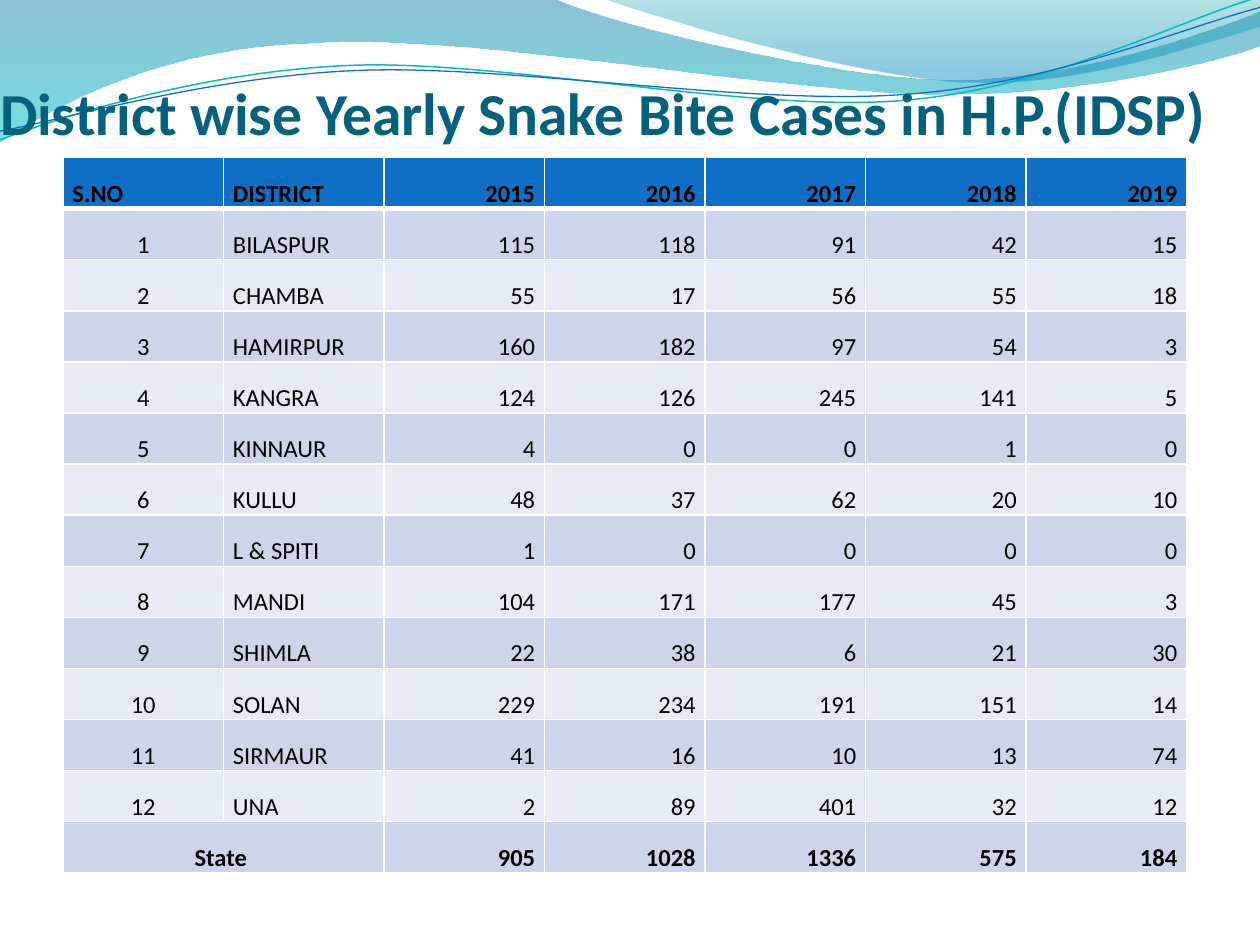
import math

import pptx
import pptx.util
import pptx.dml.color
import pptx.enum.text
import pptx.oxml
import pptx.oxml.ns

Pt = pptx.util.Pt
qn = pptx.oxml.ns.qn
ALIGN = pptx.enum.text.PP_ALIGN
BOTTOM = pptx.enum.text.MSO_ANCHOR.BOTTOM
NS = pptx.oxml.ns.nsdecls("a")

# Content
COLORS = {
    "title": "04617B", "text": "000000", "header": "0F6FC6", "grid": "FFFFFF",
    "odd": "CCD5EA", "even": "E7EBF5", "teal": "0AB8BF", "blue": "0F6FC6",
    "wave_top": "0074A1", "wave_bottom": "00C6CF",
    "crest_top": "00A1A9", "crest_bottom": "008BBF",
}
TITLE = "District wise Yearly Snake Bite Cases in H.P.(IDSP)"
HEADER = ["S.NO", "DISTRICT", 2015, 2016, 2017, 2018, 2019]
DISTRICTS = [
    ("BILASPUR", 115, 118, 91, 42, 15),
    ("CHAMBA", 55, 17, 56, 55, 18),
    ("HAMIRPUR", 160, 182, 97, 54, 3),
    ("KANGRA", 124, 126, 245, 141, 5),
    ("KINNAUR", 4, 0, 0, 1, 0),
    ("KULLU", 48, 37, 62, 20, 10),
    ("L & SPITI", 1, 0, 0, 0, 0),
    ("MANDI", 104, 171, 177, 45, 3),
    ("SHIMLA", 22, 38, 6, 21, 30),
    ("SOLAN", 229, 234, 191, 151, 14),
    ("SIRMAUR", 41, 16, 10, 13, 74),
    ("UNA", 2, 89, 401, 32, 12),
]
TOTALS = ["State ", "", 905, 1028, 1336, 575, 184]

# Each wave: start point, then segments of one point (line) or three (curve)
WAVES = [
    {"start": (0, 0), "segments": [
        [(316.8, -0.7)],
        [(342.7, 12.2), (478.1, 45.4), (545.8, 45.4)],
        [(614.2, 45.4), (689.8, 18.7), (720, 6.5)],
        [(720.7, 25.9)],
        [(707.8, 31.7), (626.4, 54.7), (537.1, 54)],
        [(447.8, 54), (275, 20.2), (185, 24.5)],
        [(92.9, 25.9), (33.1, 59.8), (-0.7, 81.4)],
        [(0, 0)]],
     "gradient": [(0, "wave_top", 45), (100, "wave_bottom", 55)]},
    {"start": (344.9, -0.7), "segments": [
        [(366.5, 7.9), (491, 44.6), (553.7, 46.8)],
        [(616.3, 49.7), (691.9, 23), (720, 15.1)],
        [(720, 0)],
        [(344.9, -0.7)]],
     "gradient": [(0, "crest_top", 30), (80, "crest_bottom", 45)]},
    {"start": (0, 79.9), "segments": [
        [(34.6, 67), (113.8, 41), (199.4, 37.4)],
        [(284.4, 33.8), (427, 64.1), (513.4, 57.6)],
        [(599.8, 51.1), (675.4, 10.8), (718.6, -1.4)]],
     "line": ("teal", 0.85), "center": (359.3, 41.4)},
    {"start": (0, 74.9), "segments": [
        [(33.8, 69.1), (118.1, 43.9), (203.8, 40.3)],
        [(290.2, 36.7), (427, 60.5), (516.2, 54)],
        [(601.9, 48.2), (677.5, 15.1), (720, 4.3)]],
     "line": ("blue", 0.75), "center": (359.6, 42.5)},
]
LINE_TILT = -2.7
TABLE_LEFT, TABLE_TOP, COL_WIDTH, ROW_HEIGHT = 36, 90, 91.75, 29.2


def rgb(name):
    return pptx.dml.color.RGBColor.from_string(COLORS[name])


def write(tf, text, size=14, color="text", bold=False, align=ALIGN.LEFT, spacing=None):
    p = tf.paragraphs[0]
    p.alignment = align
    if spacing:
        p.line_spacing = spacing
    r = p.add_run()
    r.text = str(text)
    r.font.name = "Calibri"
    r.font.size = Pt(size)
    r.font.bold = bold
    r.font.color.rgb = rgb(color)


def set_margins(box, left, top, right, bottom):
    box.margin_left, box.margin_top = Pt(left), Pt(top)
    box.margin_right, box.margin_bottom = Pt(right), Pt(bottom)


def turn(point, center, degrees):
    x, y = point[0] - center[0], point[1] - center[1]
    cos, sin = math.cos(math.radians(degrees)), math.sin(math.radians(degrees))
    return center[0] + x * cos - y * sin, center[1] + x * sin + y * cos


def bend(sp, segments):
    """Turn each run of three straight segments into one Bézier curve."""
    steps = iter(list(sp._element.iter(qn("a:lnTo"))))
    for segment in segments:
        first, *others = [next(steps) for _ in segment]
        if others:
            curve = pptx.oxml.parse_xml(f"<a:cubicBezTo {NS}/>")
            first.addprevious(curve)
            for step in (first, *others):
                curve.append(step[0])
                step.getparent().remove(step)


def add_wave(s, start, segments, gradient=None, line=None, center=None):
    points = [start] + [point for segment in segments for point in segment]
    if center:
        points = [turn(point, center, -LINE_TILT) for point in points]
    points = [(Pt(x), Pt(y)) for x, y in points]
    builder = s.shapes.build_freeform(*points[0])
    builder.add_line_segments(points[1:], close=bool(gradient))
    sp = builder.convert_to_shape()
    bend(sp, segments)
    sp.shadow.inherit = False
    if gradient:
        sp.line.fill.background()
        stops = "".join(
            f'<a:gs pos="{pos * 1000}"><a:srgbClr val="{COLORS[name]}">'
            f'<a:alpha val="{alpha * 1000}"/></a:srgbClr></a:gs>'
            for pos, name, alpha in gradient)
        fill = pptx.oxml.parse_xml(
            f'<a:gradFill {NS} rotWithShape="1"><a:gsLst>{stops}</a:gsLst>'
            '<a:lin ang="5400000" scaled="0"/></a:gradFill>')
        sp._element.spPr.find(qn("a:custGeom")).addnext(fill)
    else:
        sp.rotation = LINE_TILT
        sp.fill.background()
        sp.line.color.rgb = rgb(line[0])
        sp.line.width = Pt(line[1])


def set_borders(cell, top=1, bottom=1):
    tc_pr = cell._tc.get_or_add_tcPr()
    widths = {"lnL": 1, "lnR": 1, "lnT": top, "lnB": bottom}
    for i, (tag, width) in enumerate(widths.items()):
        tc_pr.insert(i, pptx.oxml.parse_xml(
            f'<a:{tag} {NS} w="{Pt(width)}"><a:solidFill>'
            f'<a:srgbClr val="{COLORS["grid"]}"/></a:solidFill></a:{tag}>'))


def add_case_table(s):
    rows = [HEADER] + [[n, *d] for n, d in enumerate(DISTRICTS, 1)] + [TOTALS]
    last, cols = len(rows) - 1, len(HEADER)
    table = s.shapes.add_table(
        len(rows), cols, Pt(TABLE_LEFT), Pt(TABLE_TOP),
        Pt(COL_WIDTH * cols), Pt(ROW_HEIGHT * len(rows))).table
    for column in table.columns:
        column.width = Pt(COL_WIDTH)
    for row in table.rows:
        row.height = Pt(ROW_HEIGHT)
    table.cell(last, 0).merge(table.cell(last, 1))
    for i, row in enumerate(rows):
        fill = "header" if i == 0 else "odd" if i % 2 else "even"
        for j, value in enumerate(row):
            cell = table.cell(i, j)
            cell.fill.solid()
            cell.fill.fore_color.rgb = rgb(fill)
            cell.vertical_anchor = BOTTOM
            set_margins(cell, 5.4, 0, 5.4, 0)
            set_borders(cell, top=3 if i == 1 else 1, bottom=3 if i == 0 else 1)
            if cell.is_spanned:
                continue
            align = ALIGN.RIGHT if j > 1 else ALIGN.CENTER if i and j == 0 else ALIGN.LEFT
            write(cell.text_frame, value, bold=i in (0, last), align=align, spacing=1.15)


def main():
    prs = pptx.Presentation()
    prs.slide_width, prs.slide_height = Pt(720), Pt(540)
    s = prs.slides.add_slide(prs.slide_layouts[5])
    # Wave decoration
    for wave in WAVES:
        add_wave(s, **wave)
    # Title, in front of the waves
    title = s.shapes.title
    s.shapes._spTree.append(title._element)
    title.left, title.top, title.width, title.height = Pt(0), Pt(36), Pt(720), Pt(48.2)
    tf = title.text_frame
    tf.word_wrap = True
    tf.auto_size = pptx.enum.text.MSO_AUTO_SIZE.NONE
    tf.vertical_anchor = BOTTOM
    set_margins(tf, 0, 3.6, 0, 0)
    write(tf, TITLE, size=34, color="title", bold=True)
    # Cases by district and year
    add_case_table(s)
    prs.save("out.pptx")


if __name__ == "__main__":
    main()
